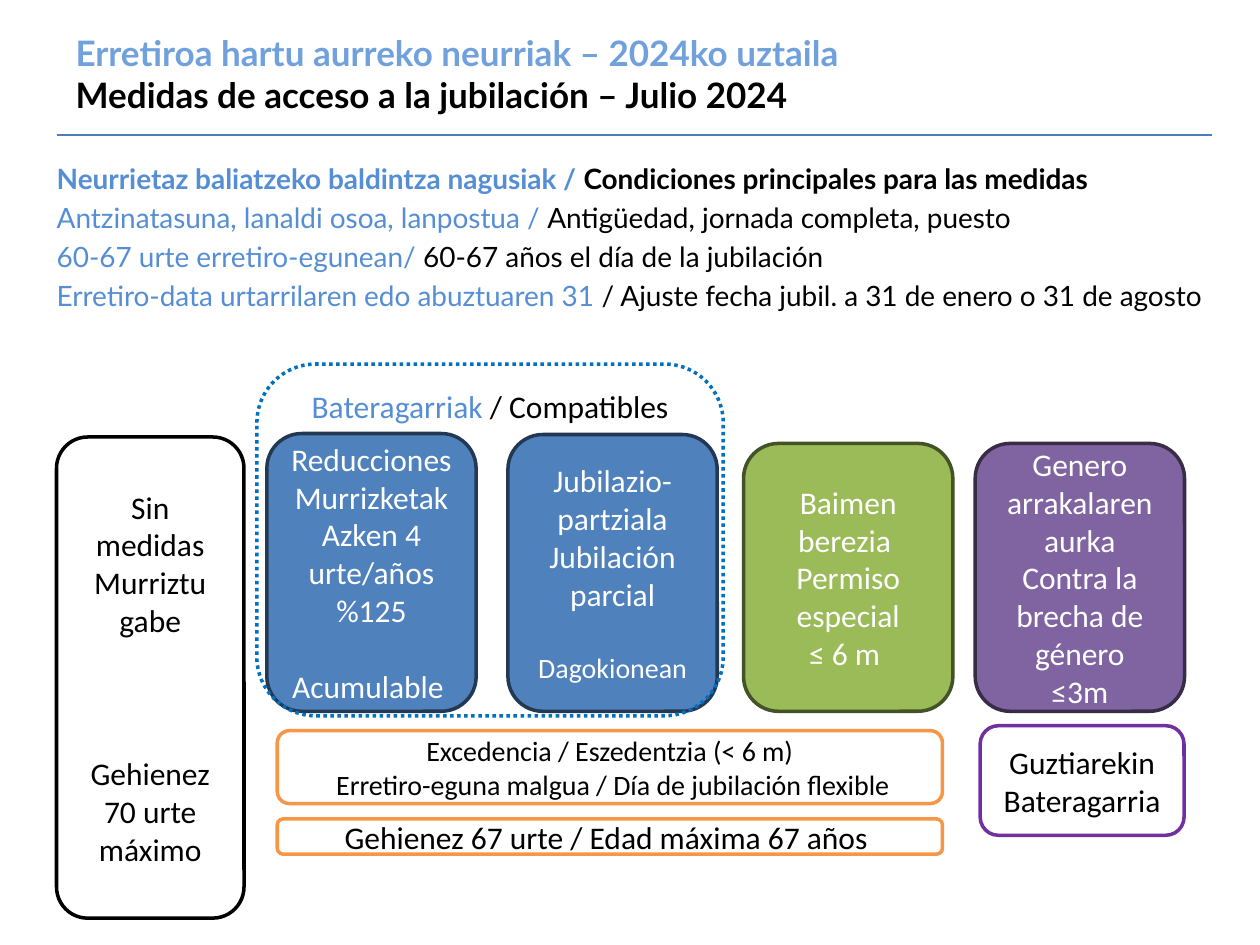
from pptx import Presentation
from pptx.dml.color import RGBColor
from pptx.enum.dml import MSO_LINE
from pptx.enum.shapes import MSO_CONNECTOR, MSO_SHAPE
from pptx.enum.text import MSO_ANCHOR, MSO_AUTO_SIZE, PP_ALIGN
from pptx.util import Cm, Pt
from lxml import etree

BLACK = RGBColor(0x00, 0x00, 0x00)
WHITE = RGBColor(0xFF, 0xFF, 0xFF)
TITLE_BLUE = RGBColor(0x71, 0xA1, 0xDC)
BASQUE_BLUE = RGBColor(0x55, 0x8E, 0xD5)
RULE_BLUE = RGBColor(0x4B, 0x7E, 0xBC)
CARD_BLUE = RGBColor(0x4F, 0x81, 0xBD)
CARD_BLUE_EDGE = RGBColor(0x23, 0x39, 0x53)
GREEN = RGBColor(0x9B, 0xBB, 0x59)
GREEN_EDGE = RGBColor(0x44, 0x52, 0x27)
PURPLE = RGBColor(0x80, 0x64, 0xA2)
PURPLE_EDGE = RGBColor(0x38, 0x2C, 0x47)
VIOLET = RGBColor(0x70, 0x30, 0xA0)
ORANGE = RGBColor(0xF7, 0x96, 0x46)
DOT_BLUE = RGBColor(0x00, 0x70, 0xC0)

DRAWING = "{http://schemas.openxmlformats.org/drawingml/2006/main}"
BLANK_LINE = 22  # height in points of one 18 pt line


def place(shape, box):
    shape.left, shape.top, shape.width, shape.height = (Cm(value) for value in box)


def add_run(paragraph, text, size, color, font="Calibri", bold=False):
    run = paragraph.add_run()
    run.text = text
    run.font.name = font
    run.font.size = Pt(size)
    run.font.bold = bold
    run.font.color.rgb = color


def next_paragraph(frame, index):
    return frame.add_paragraph() if index else frame.paragraphs[0]


def add_box(slide, box, fill, edge, lines, color=BLACK):
    """Rounded box; each line is (text, size, space before)."""
    shape = slide.shapes.add_shape(MSO_SHAPE.ROUNDED_RECTANGLE,
                                   *(Cm(value) for value in box))
    shape.shadow.inherit = False
    if fill is None:
        shape.fill.background()
    else:
        shape.fill.solid()
        shape.fill.fore_color.rgb = fill
    shape.line.color.rgb = edge
    shape.line.width = Pt(2)
    frame = shape.text_frame
    frame.word_wrap = True
    frame.vertical_anchor = MSO_ANCHOR.MIDDLE
    for index, (text, size, gap) in enumerate(lines):
        paragraph = next_paragraph(frame, index)
        paragraph.alignment = PP_ALIGN.CENTER
        paragraph.space_before = Pt(gap)
        add_run(paragraph, text, size, color)
    return shape


def build_title(slide, box):
    left, top, width, height = box
    title = slide.shapes.title
    place(title, box)
    frame = title.text_frame
    frame.auto_size = MSO_AUTO_SIZE.NONE
    frame.vertical_anchor = MSO_ANCHOR.TOP
    lines = [("Erretiroa hartu aurreko neurriak – 2024ko uztaila", TITLE_BLUE),
             ("Medidas de acceso a la jubilación – Julio 2024", BLACK)]
    for index, (text, color) in enumerate(lines):
        paragraph = next_paragraph(frame, index)
        paragraph.alignment = PP_ALIGN.LEFT
        paragraph.space_before = Pt(0)
        add_run(paragraph, text, 20, color, "Lato", True)
    # Rule under the title
    rule_top = Cm(top + 2.21)
    rule = slide.shapes.add_connector(MSO_CONNECTOR.STRAIGHT, Cm(left - 0.13), rule_top,
                                      Cm(left + 23.16), rule_top)
    rule.line.color.rgb = RULE_BLUE
    rule.line.width = Pt(1.5)
    etree.SubElement(rule.line._get_or_add_ln().getparent(), DRAWING + "effectLst")


def build_conditions(slide, box):
    body = slide.placeholders[1]
    place(body, box)
    frame = body.text_frame
    frame.auto_size = MSO_AUTO_SIZE.NONE
    lines = [("Neurrietaz baliatzeko baldintza nagusiak / ",
              "Condiciones principales para las medidas"),
             ("Antzinatasuna, lanaldi osoa, lanpostua / ",
              "Antigüedad, jornada completa, puesto"),
             ("60-67 urte erretiro-egunean/ ", "60-67 años el día de la jubilación"),
             ("Erretiro-data urtarrilaren edo abuztuaren 31 ",
              "/ Ajuste fecha jubil. a 31 de enero o 31 de agosto")]
    for index, (basque, spanish) in enumerate(lines):
        paragraph = next_paragraph(frame, index)
        properties = paragraph._p.get_or_add_pPr()
        properties.set("marL", str(Cm(0.95)))
        properties.set("indent", str(-Cm(0.95)))
        etree.SubElement(properties, DRAWING + "buNone")
        add_run(paragraph, basque, 16, BASQUE_BLUE, "Lato", index == 0)
        add_run(paragraph, spanish, 16, BLACK, "Lato", index == 0)


def build_measures(slide, box):
    left, top, width, height = box
    card_width = 4.22
    cards = [
        (0, 0, CARD_BLUE, CARD_BLUE_EDGE,
         [("Reducciones", 18, 0), ("Murrizketak", 18, 0), ("Azken 4 urte/años", 18, 0),
          ("%125", 18, 0), ("Acumulable ", 18, BLANK_LINE)]),
        (4.86, 0.02, CARD_BLUE, CARD_BLUE_EDGE,
         [("Jubilazio-partziala", 18, 0), ("Jubilación parcial", 18, 0),
          ("Dagokionean", 16, BLANK_LINE)]),
        (9.61, 0.2, GREEN, GREEN_EDGE,
         [("Baimen berezia ", 18, 0), ("Permiso especial", 18, 0), ("≤ 6 m ", 18, 0)]),
        (width - card_width, 0.2, PURPLE, PURPLE_EDGE,
         [("Genero arrakalaren aurka", 18, 0), ("Contra la brecha de género", 18, 0),
          ("≤3m", 18, 0)]),
    ]
    for x, y, fill, edge, lines in cards:
        add_box(slide, (left + x, top + y, card_width, height - y), fill, edge, lines, WHITE)


def build_no_measures(slide, box):
    add_box(slide, box, WHITE, BLACK,
            [("Sin medidas", 18, 0), ("Murriztu gabe", 18, 0),
             ("Gehienez 70 urte máximo", 18, 3 * BLANK_LINE)])


def build_limits(slide, box):
    left, top, width, height = box
    bar_width = 13.41
    add_box(slide, (left, top + 0.1, bar_width, 1.47), WHITE, ORANGE,
            [("Excedencia / Eszedentzia (< 6 m)", 16, 0),
             (" Erretiro-eguna malgua / Día de jubilación flexible", 16, 0)])
    add_box(slide, (left, top + 1.88, bar_width, 0.71), WHITE, ORANGE,
            [("Gehienez 67 urte / Edad máxima 67 años ", 18, 0)])
    add_box(slide, (left + width - 4.11, top, 4.11, 2.21), WHITE, VIOLET,
            [("Guztiarekin Bateragarria", 18, 0)])


def build_compatible_frame(slide, box):
    shape = add_box(slide, box, None, DOT_BLUE, [("Bateragarriak", 18, 0)], BASQUE_BLUE)
    shape.line.dash_style = MSO_LINE.ROUND_DOT
    shape.text_frame.vertical_anchor = MSO_ANCHOR.TOP
    add_run(shape.text_frame.paragraphs[0], " / Compatibles", 18, BLACK)


def main():
    presentation = Presentation()
    presentation.slide_width = Cm(25.4)
    presentation.slide_height = Cm(19.05)
    slide = presentation.slides.add_slide(presentation.slide_layouts[1])
    build_title(slide, (1.27, 0.51, 21.23, 2.29))
    build_conditions(slide, (0.89, 3.12, 24.13, 13.79))
    build_measures(slide, (5.38, 8.74, 18.5, 5.6))
    build_no_measures(slide, (1.14, 8.81, 3.78, 9.7))
    build_limits(slide, (5.59, 14.63, 18.28, 2.59))
    build_compatible_frame(slide, (5.18, 7.34, 9.4, 7.09))
    presentation.save("out.pptx")


if __name__ == "__main__":
    main()
